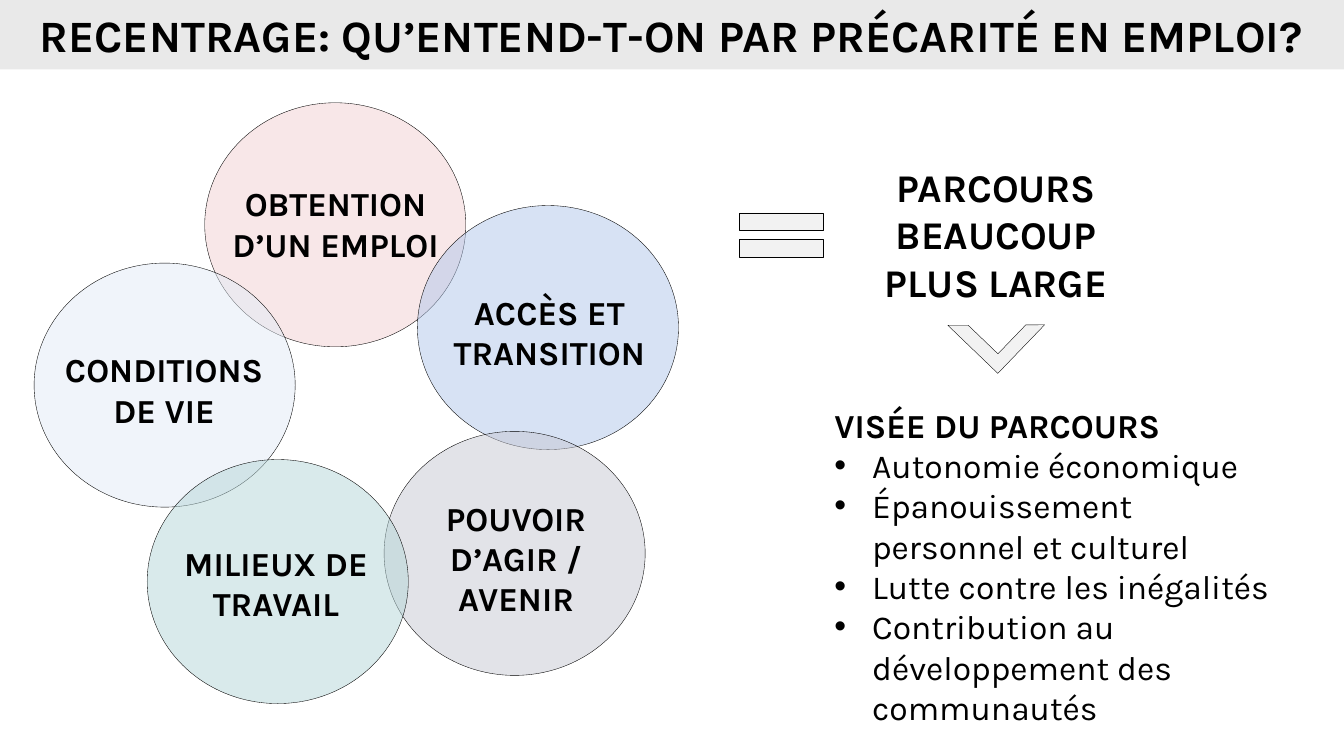
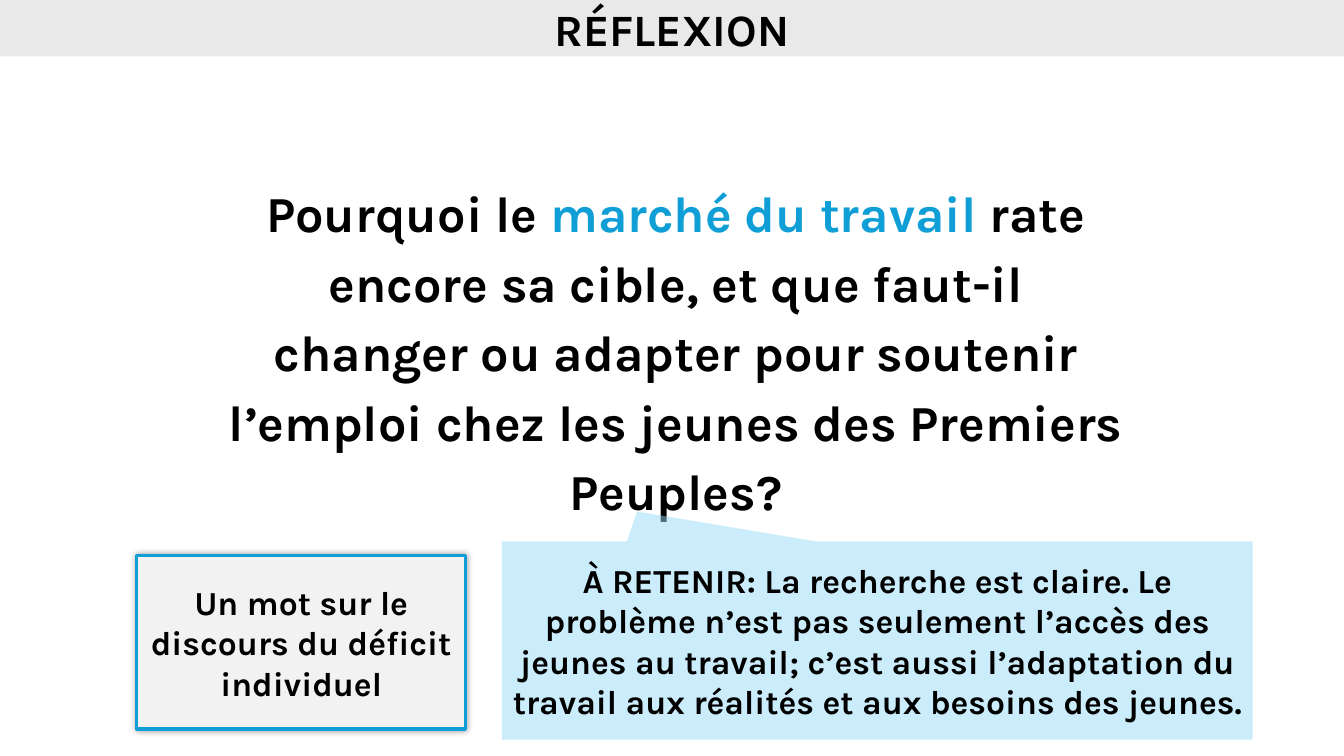
import pptx
import pptx.util
import pptx.dml.color
import pptx.enum.shapes
import pptx.enum.text
import pptx.oxml.ns
from lxml import etree

Cm, Pt = pptx.util.Cm, pptx.util.Pt
SHAPE = pptx.enum.shapes.MSO_SHAPE
ALIGN = pptx.enum.text.PP_ALIGN
ANCHOR = pptx.enum.text.MSO_ANCHOR
qn = pptx.oxml.ns.qn

FONT = "Karla"
SLIDE_WIDTH, SLIDE_HEIGHT = 33.87, 19.05
COLORS = {
    "text": "000000", "band": "E9E9E9", "panel": "F2F2F2",
    "accent": "0F9ED5", "callout": "96DCF8", "rose": "F3D1D2",
    "pale": "E2EBF6", "blue": "B0C6EA", "gray": "C7C8D3", "teal": "B6D6D8",
}
THIN, THICK = ("text", 0.25), ("accent", 2.25)

# Positions and sizes are in centimetres: left, top, width, height.
CIRCLE_SIZE = (6.58, 6.15)
LABEL_SIZE = (5.99, 2.62)
CIRCLES = [  # label, colour, opacity, circle corner, label corner
    ("OBTENTION D’UN EMPLOI", "rose", 50, (5.16, 2.59), (5.46, 4.32)),
    ("CONDITIONS DE VIE", "pale", 50, (0.86, 6.63), (1.14, 8.51)),
    ("ACCÈS ET TRANSITION", "blue", 50, (10.52, 5.18), (10.85, 7.06)),
    ("POUVOIR D’AGIR / AVENIR", "gray", 50, (9.68, 10.87), (10.01, 12.75)),
    ("MILIEUX DE TRAVAIL", "teal", 51, (3.71, 11.58), (3.96, 13.39)),
]
WIDER_PATH = "PARCOURS BEAUCOUP PLUS LARGE"
AIMS_TITLE = "VISÉE DU PARCOURS"
AIMS = [
    "Autonomie économique",
    "Épanouissement personnel et culturel",
    "Lutte contre les inégalités",
    "Contribution au développement des communautés",
]
QUESTION = [
    ("Pourquoi le ", "text"),
    ("marché du travail ", "accent"),
    ("rate encore sa cible, et que faut-il changer ou adapter pour soutenir "
     "l’emploi chez les jeunes des Premiers Peuples?", "text"),
]
TAKEAWAY = ("À RETENIR: La recherche est claire. Le problème n’est pas "
            "seulement l’accès des jeunes au travail; c’est aussi l’adaptation "
            "du travail aux réalités et aux besoins des jeunes.")
DEFICIT = "Un mot sur le discours du déficit individuel"


def rgb(color):
    return pptx.dml.color.RGBColor.from_string(COLORS[color])


def set_all(target, **values):
    for name, value in values.items():
        setattr(target, name, value)


def add_span(para, text, size=24, color="text", bold=True):
    span = para.add_run()
    span.text = text
    set_all(span.font, name=FONT, size=Pt(size), bold=bold)
    span.font.color.rgb = rgb(color)


def prepare_frame(shape, anchor=ANCHOR.MIDDLE, align=ALIGN.CENTER):
    """Set wrapping and alignment, and return the first paragraph."""
    set_all(shape.text_frame, word_wrap=True, vertical_anchor=anchor)
    para = shape.text_frame.paragraphs[0]
    para.alignment = align
    return para


def add_box(page, area, **frame):
    box = page.shapes.add_textbox(*map(Cm, area))
    return box, prepare_frame(box, **frame)


def add_figure(page, kind, area, fill, line=None, opacity=None):
    shape = page.shapes.add_shape(kind, *map(Cm, area))
    shape.shadow.inherit = False
    shape.fill.solid()
    shape.fill.fore_color.rgb = rgb(fill)
    if opacity:
        color = shape.element.spPr.find(qn("a:solidFill"))[0]
        etree.SubElement(color, qn("a:alpha"), val=str(opacity * 1000))
    if line:
        color, width = line
        shape.line.color.rgb = rgb(color)
        shape.line.width = Pt(width)
    else:
        shape.line.fill.background()
    return shape


def add_glow(shape, blur, opacity):
    """Give the shape a soft black shadow on all sides."""
    effects = shape.element.spPr.find(qn("a:effectLst"))
    shadow = etree.SubElement(effects, qn("a:outerShdw"),
                              blurRad=str(Pt(blur)), dist="0", dir="0",
                              algn="ctr", rotWithShape="0")
    color = etree.SubElement(shadow, qn("a:srgbClr"), val=COLORS["text"])
    etree.SubElement(color, qn("a:alpha"), val=str(opacity * 1000))


def add_bullet(para, indent):
    properties = para._p.get_or_add_pPr()
    properties.set("marL", str(Cm(indent)))
    properties.set("indent", str(-Cm(indent)))
    etree.SubElement(properties, qn("a:buFont"), typeface="Arial")
    etree.SubElement(properties, qn("a:buChar"), char="•")


def add_page(deck, title, band_height):
    return_page = deck.slides.add_slide(deck.slide_layouts[6])
    band = add_figure(return_page, SHAPE.RECTANGLE,
                      (0, 0, SLIDE_WIDTH, band_height), "band")
    add_span(prepare_frame(band), title, size=32)
    return return_page


def build_precarity(deck):
    page = add_page(deck, "RECENTRAGE: QU’ENTEND-T-ON PAR PRÉCARITÉ EN EMPLOI?", 1.75)
    for _, color, opacity, corner, _ in CIRCLES:
        add_figure(page, SHAPE.OVAL, corner + CIRCLE_SIZE, color, THIN, opacity)
    for label, _, _, _, corner in CIRCLES:
        _, para = add_box(page, corner + LABEL_SIZE)
        add_span(para, label)

    add_figure(page, SHAPE.MATH_EQUAL, (18.26, 4.98, 2.87, 1.88), "panel", THIN)
    _, para = add_box(page, (21.51, 4.37, 7.19, 3.07))
    add_span(para, WIDER_PATH, size=28)

    chevron = add_figure(page, SHAPE.HALF_FRAME, (24.23, 7.34, 1.75, 1.7), "panel", THIN)
    chevron.rotation = 223.9
    chevron.adjustments[0], chevron.adjustments[1] = 0.21, 0.2

    box, para = add_box(page, (20.78, 9.8, 11.48, 8.92), align=ALIGN.LEFT)
    add_span(para, AIMS_TITLE)
    for aim in AIMS:
        para = box.text_frame.add_paragraph()
        add_bullet(para, 0.95)
        add_span(para, aim, bold=False)


def build_reflection(deck):
    page = add_page(deck, "RÉFLEXION", 1.42)
    _, para = add_box(page, (5.46, 4.24, 23.14, 7.24), anchor=ANCHOR.TOP)
    set_all(para, line_spacing=1.15, space_after=Pt(8))
    for text, color in QUESTION:
        add_span(para, text, size=36, color=color)

    callout = add_figure(page, SHAPE.RECTANGULAR_CALLOUT,
                         (12.65, 13.64, 18.92, 5), "callout", opacity=49)
    callout.adjustments[0], callout.adjustments[1] = -0.32, -0.65
    add_span(prepare_frame(callout), TAKEAWAY)

    panel = add_figure(page, SHAPE.RECTANGLE, (3.45, 14, 8.28, 4.37), "panel", THICK)
    add_glow(panel, blur=5, opacity=40)
    add_span(prepare_frame(panel), DEFICIT)


def main():
    deck = pptx.Presentation()
    set_all(deck, slide_width=Cm(SLIDE_WIDTH), slide_height=Cm(SLIDE_HEIGHT))
    build_precarity(deck)
    build_reflection(deck)
    deck.save("out.pptx")


if __name__ == "__main__":
    main()
